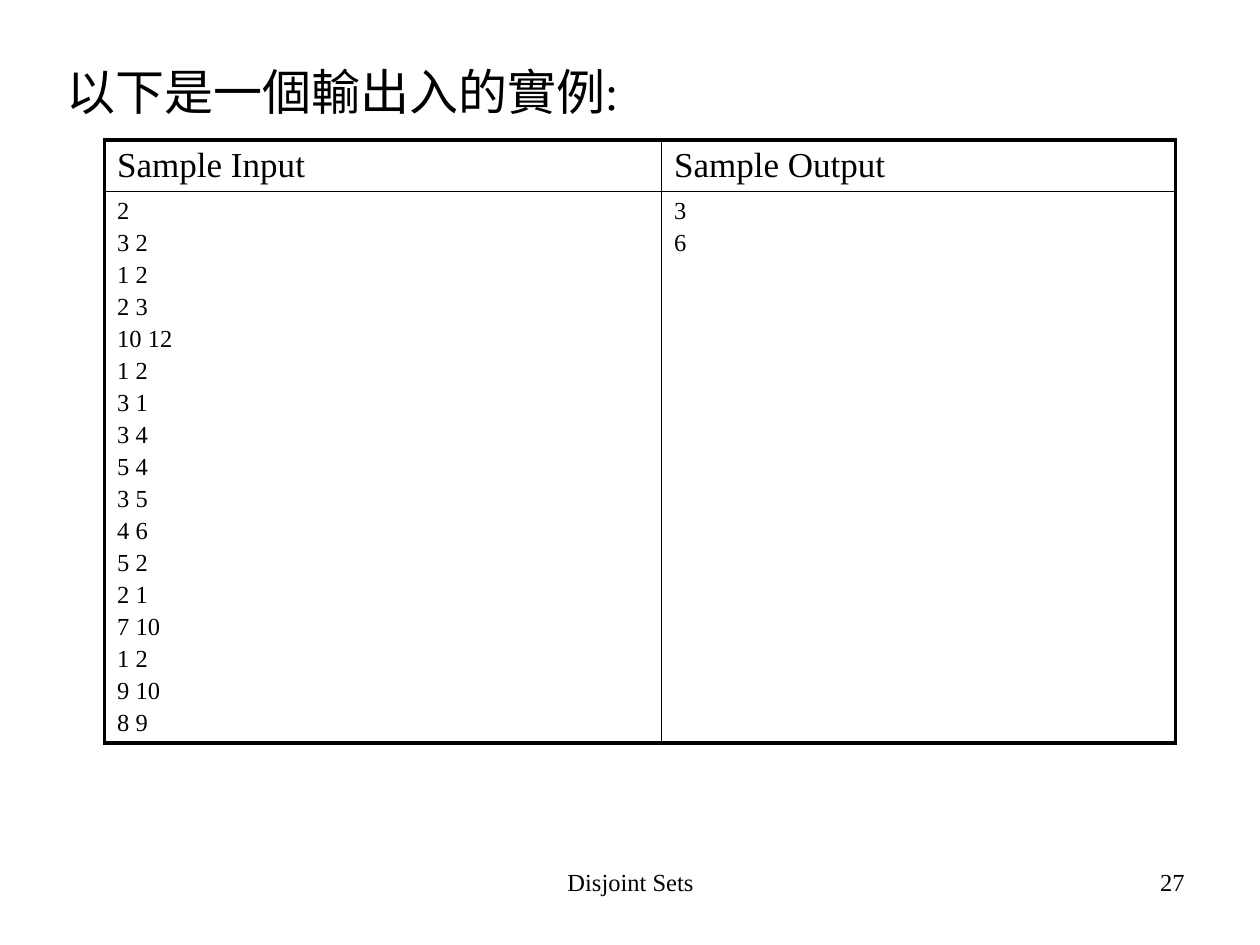
"""Build the slide with a sample input and output table for disjoint sets."""
from lxml import etree
from pptx import Presentation
from pptx.dml.color import RGBColor
from pptx.enum.text import MSO_ANCHOR, PP_ALIGN
from pptx.oxml.ns import qn
from pptx.util import Inches, Pt

TITLE = "以下是一個輸出入的實例:"
HEADERS = ["Sample Input", "Sample Output"]
SAMPLES = [
    ["2", "3 2", "1 2", "2 3", "10 12", "1 2", "3 1", "3 4", "5 4", "3 5",
     "4 6", "5 2", "2 1", "7 10", "1 2", "9 10", "8 9"],
    ["3", "6"],
]
FOOTERS = [
    ("Disjoint Sets", 3.42, 3.17, PP_ALIGN.CENTER),
    ("27", 7.17, 2.33, PP_ALIGN.RIGHT),
]

FONT = "Times New Roman"
BLACK = RGBColor(0, 0, 0)
WHITE = RGBColor(255, 255, 255)
LEFT, TOP = PP_ALIGN.LEFT, MSO_ANCHOR.TOP
OUTER, INNER = 2.25, 1
COLUMNS, ROWS = (4.42, 4.08), (0.39, 4.13)
FOOTER_TOP, FOOTER_HEIGHT = 6.83, 0.52


def write(frame, lines, size, align=LEFT, spacing=0.2):
    frame.word_wrap = True
    frame.vertical_anchor = TOP
    for index, line in enumerate(lines):
        paragraph = frame.paragraphs[0] if index == 0 else frame.add_paragraph()
        paragraph.alignment = align
        paragraph.space_before = Pt(size * spacing)
        run = paragraph.add_run()
        run.text = line
        run.font.size = Pt(size)
        run.font.name = FONT
        run.font.color.rgb = BLACK


def draw_borders(cell, widths):
    properties = cell._tc.get_or_add_tcPr()
    for side, width in zip("LRTB", widths):
        line = etree.SubElement(properties, qn(f"a:ln{side}"), w=str(Pt(width)))
        fill = etree.SubElement(line, qn("a:solidFill"))
        etree.SubElement(fill, qn("a:srgbClr"), val=str(BLACK))


def add_samples(slide):
    table = slide.shapes.add_table(
        len(ROWS), len(COLUMNS), Inches(0.83), Inches(1.11),
        Inches(sum(COLUMNS)), Inches(sum(ROWS))).table
    table.first_row = table.horz_banding = False
    for column, width in zip(table.columns, COLUMNS):
        column.width = Inches(width)
    for row, height in zip(table.rows, ROWS):
        row.height = Inches(height)
    for c, (header, sample) in enumerate(zip(HEADERS, SAMPLES)):
        for r, (lines, size) in enumerate([([header], 20), (sample, 14)]):
            cell = table.cell(r, c)
            edges = (c == 0, c == len(COLUMNS) - 1, r == 0, r == len(ROWS) - 1)
            draw_borders(cell, [OUTER if edge else INNER for edge in edges])
            cell.fill.background()
            write(cell.text_frame, lines, size)
            cell.vertical_anchor = TOP


def main():
    deck = Presentation()
    deck.slide_width, deck.slide_height = Inches(10), Inches(7.5)
    slide = deck.slides.add_slide(deck.slide_layouts[5])
    slide.background.fill.solid()
    slide.background.fill.fore_color.rgb = WHITE

    title = slide.shapes.title
    title.left, title.top = Inches(0.43), Inches(0.44)
    title.width, title.height = Inches(9), Inches(0.65)
    write(title.text_frame, [TITLE], 28, spacing=0)

    add_samples(slide)
    for text, left, width, align in FOOTERS:
        footer = slide.shapes.add_textbox(
            Inches(left), Inches(FOOTER_TOP), Inches(width), Inches(FOOTER_HEIGHT))
        write(footer.text_frame, [text], 14, align=align, spacing=0)
    deck.save("out.pptx")


if __name__ == "__main__":
    main()
